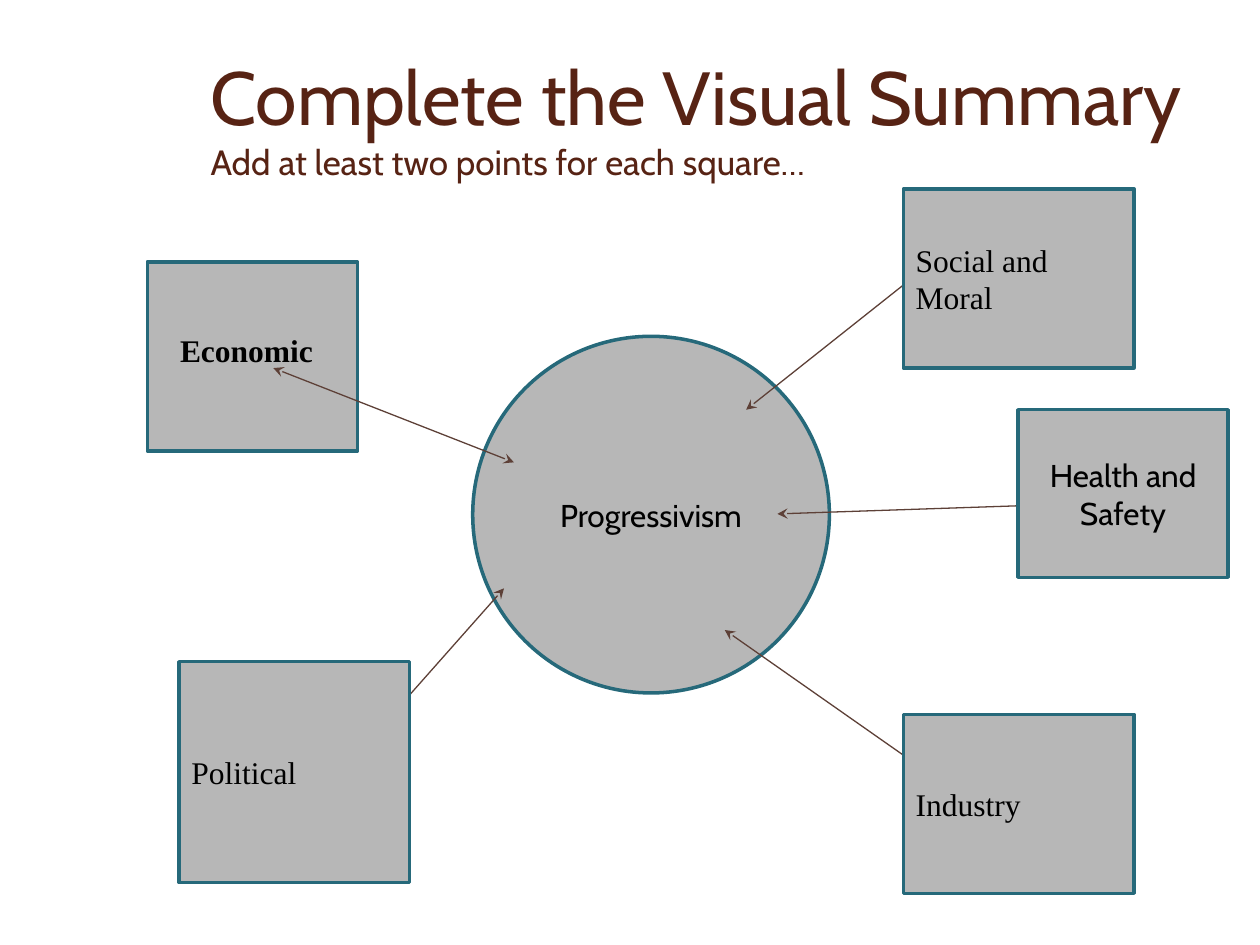
"""Build the Progressivism visual summary slide."""
from dataclasses import dataclass

from lxml import etree
from pptx import Presentation
from pptx import util as u
from pptx.dml.color import RGBColor
from pptx.enum import shapes, text
from pptx.oxml import ns


@dataclass(frozen=True)
class Theme:
    """Colours, fonts and type sizes of the slide."""
    title: RGBColor = RGBColor.from_string("572314")
    fill: RGBColor = RGBColor.from_string("B7B7B7")
    outline: RGBColor = RGBColor.from_string("26697A")
    arrow: RGBColor = RGBColor.from_string("5D4037")
    ink: RGBColor = RGBColor.from_string("000000")
    sans: str = "Cabin"
    serif: str = "Times New Roman"
    title_size: float = 43
    subtitle_size: float = 20
    label_size: float = 18


THEME = Theme()
LEFT, CENTER = text.PP_ALIGN.LEFT, text.PP_ALIGN.CENTER
SQUARE, CIRCLE = shapes.MSO_SHAPE.RECTANGLE, shapes.MSO_SHAPE.OVAL
ARROWS = [
    ((5.51, 7.42), (10.36, 9.32)),
    ((19.05, 5.08), (15.04, 8.26)),
    ((10.16, 11.86), (6.99, 15.44)),
    ((14.61, 12.7), (18.85, 15.67)),
    ((15.67, 10.36), (21.59, 10.16)),
]
SERIF_SQUARES = [
    ("Political", (3.61, 13.34, 4.65, 4.45)),
    ("Social and Moral", (18.21, 3.81, 4.65, 3.61)),
    ("Industry", (18.21, 14.4, 4.65, 3.61)),
]


def lengths(values):
    """Turn centimetre numbers into lengths."""
    return [u.Cm(value) for value in values]


def set_title(page, heading, instruction, place):
    """Place the title with its smaller second line."""
    box = page.shapes.title
    box.left, box.top, box.width, box.height = lengths(place)
    frame = box.text_frame
    frame.word_wrap = True
    frame.auto_size = text.MSO_AUTO_SIZE.NONE
    frame.vertical_anchor = text.MSO_ANCHOR.MIDDLE
    para = frame.paragraphs[0]
    para.alignment = LEFT
    para.font.name = THEME.sans
    para.font.color.rgb = THEME.title
    span = para.add_run()
    span.text = heading
    span.font.size = u.Pt(THEME.title_size)
    para.add_line_break()
    span = para.add_run()
    span.text = instruction
    span.font.size = u.Pt(THEME.subtitle_size)


def set_label(box, label, font_name, alignment=LEFT, bold=False):
    """Write one label into a box."""
    box.text_frame.word_wrap = True
    para = box.text_frame.paragraphs[0]
    para.text = label
    para.alignment = alignment
    para.font.name = font_name
    para.font.size = u.Pt(THEME.label_size)
    para.font.bold = bold
    para.font.color.rgb = THEME.ink


def add_node(page, kind, place):
    """Add a grey shape with a teal outline."""
    box = page.shapes.add_shape(kind, *lengths(place))
    box.shadow.inherit = False
    box.fill.solid()
    box.fill.fore_color.rgb = THEME.fill
    box.line.color.rgb = THEME.outline
    box.line.width = u.Pt(2)
    box.text_frame.vertical_anchor = text.MSO_ANCHOR.MIDDLE
    return box


def add_arrow(page, start, end):
    """Add a thin line with an arrowhead at both ends."""
    arrow = page.shapes.add_connector(
        shapes.MSO_CONNECTOR.STRAIGHT, *lengths(start + end))
    arrow.line.color.rgb = THEME.arrow
    arrow.line.width = u.Pt(0.75)
    properties = arrow.element.spPr
    outline = properties.find(ns.qn("a:ln"))
    for tag in ("a:headEnd", "a:tailEnd"):
        etree.SubElement(outline, ns.qn(tag), type="stealth")
    etree.SubElement(properties, ns.qn("a:effectLst"))


def main():
    """Build and save the deck."""
    deck = Presentation()
    deck.slide_width, deck.slide_height = lengths((25.4, 19.05))
    page = deck.slides.add_slide(deck.slide_layouts[5])
    set_title(page, "Complete the Visual Summary",
              "Add at least two points for each square…",
              (3.99, 0.76, 20.83, 3.18))
    add_node(page, SQUARE, (2.97, 5.28, 4.24, 3.81))
    hub = add_node(page, CIRCLE, (9.53, 6.78, 7.19, 7.19))
    set_label(hub, "Progressivism", THEME.sans, CENTER)
    for start, end in ARROWS:
        add_arrow(page, start, end)
    economic = page.shapes.add_textbox(*lengths((3.38, 6.55, 5.72, 3.33)))
    set_label(economic, "Economic", THEME.serif, bold=True)
    for label, place in SERIF_SQUARES:
        set_label(add_node(page, SQUARE, place), label, THEME.serif)
    health = add_node(page, SQUARE, (20.52, 8.26, 4.24, 3.38))
    set_label(health, "Health and Safety", THEME.sans, CENTER)
    deck.save("out.pptx")


if __name__ == "__main__":
    main()
